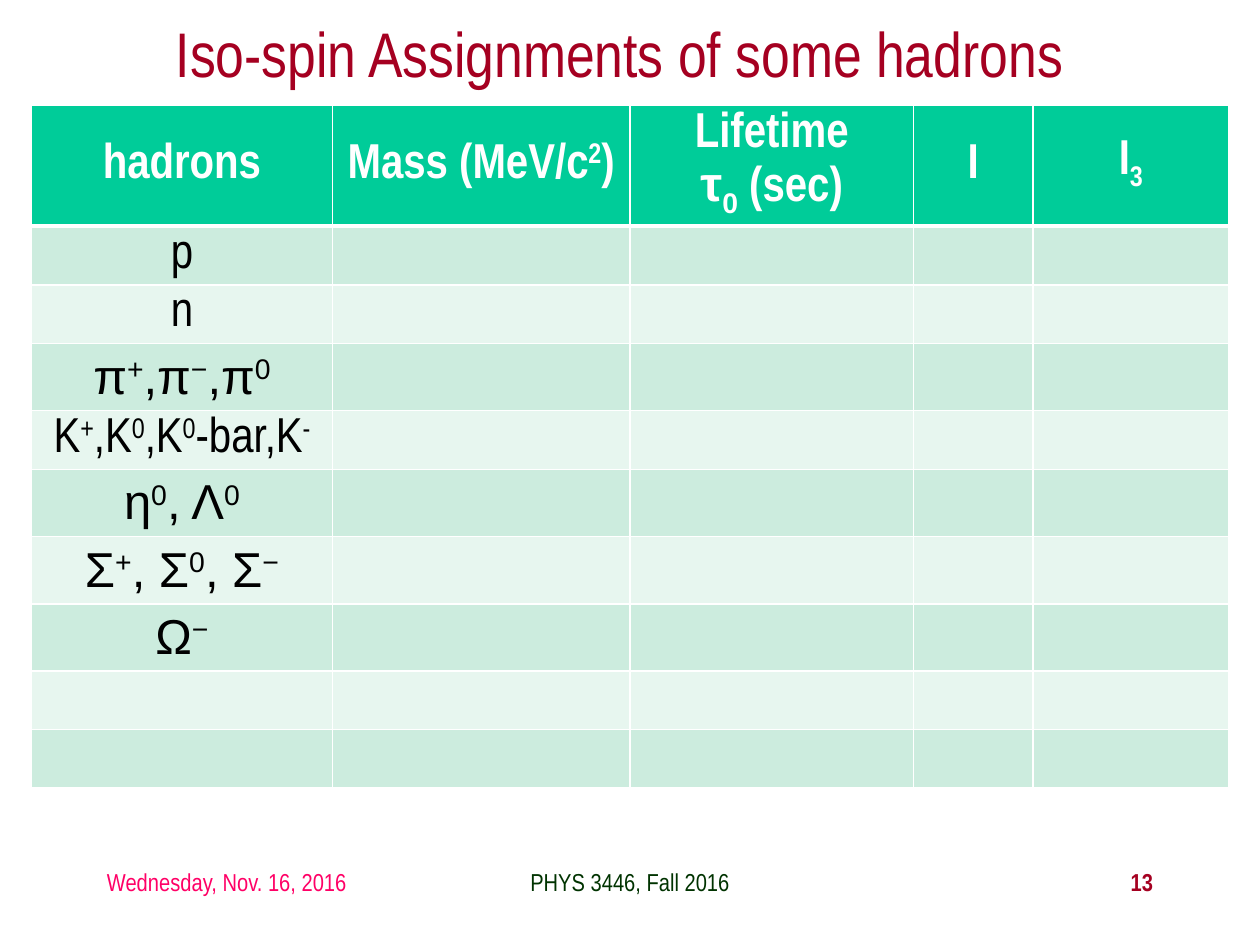
from dataclasses import dataclass

from lxml.etree import SubElement
from pptx import Presentation
from pptx.dml.color import RGBColor
from pptx.enum.text import MSO_ANCHOR as Anchor, MSO_AUTO_SIZE as AutoSize, PP_ALIGN as Align
from pptx.oxml.ns import qn
from pptx.util import Pt


@dataclass(frozen=True)
class Theme:
    narrow: str = "Arial Narrow"
    wide: str = "Arial"
    title: str = "A50021"
    date: str = "FF0066"
    course: str = "003300"
    header: str = "00CC99"
    bands: tuple = ("CCECDE", "E7F6EF")
    white: str = "FFFFFF"
    ink: str = "000000"
    title_size: int = 36
    table_size: int = 28
    footer_size: int = 14


T = Theme()
SUP, SUB = 30000, -25000
COLUMNS = (172, 170, 162, 68.4, 111.6)
HEADER_HEIGHT = 68.4
ROW_HEIGHTS = {T.narrow: 33.4, T.wide: 38.4}
HEADERS = [
    [[("hadrons", T.narrow, 0)]],
    [[("Mass (MeV/c", T.narrow, 0), ("2", T.narrow, SUP), (")", T.narrow, 0)]],
    [[("Lifetime", T.narrow, 0)],
     [("τ", T.wide, 0), ("0", T.wide, SUB), (" (sec)", T.narrow, 0)]],
    [[("I", T.narrow, 0)]],
    [[("I", T.narrow, 0), ("3", T.narrow, SUB)]],
]
# Base text and superscripts alternate within each hadron row.
HADRONS = [
    (T.narrow, ["p"]),
    (T.narrow, ["n"]),
    (T.wide, ["π", "+", ",π", "−", ",π", "0"]),
    (T.narrow, ["K", "+", ",K", "0", ",K", "0", "-bar,K", "-"]),
    (T.wide, ["η", "0", ", Λ", "0"]),
    (T.wide, ["Σ", "+", ", Σ", "0", ", Σ", "−"]),
    (T.wide, ["Ω", "−"]),
    (T.narrow, []),
    (T.narrow, []),
]


def add_run(p, text, size, color, font=T.narrow, bold=False, baseline=0):
    r = p.add_run()
    r.text = text
    r.font.name, r.font.size, r.font.bold = font, Pt(size), bold
    r.font.color.rgb = RGBColor.from_string(color)
    if baseline:
        r._r.get_or_add_rPr().set("baseline", str(baseline))


def add_title(s, x, y, w, h):
    sp = s.shapes.title
    sp.left, sp.top, sp.width, sp.height = Pt(x), Pt(y), Pt(w), Pt(h)
    tf = sp.text_frame
    tf.auto_size, tf.vertical_anchor = AutoSize.NONE, Anchor.MIDDLE
    p = tf.paragraphs[0]
    p.alignment = Align.CENTER
    add_run(p, "Iso-spin Assignments of some hadrons", T.title_size, T.title)


def style_cell(cell, fill, bottom=1):
    cell.fill.solid()
    cell.fill.fore_color.rgb = RGBColor.from_string(fill)
    tcPr = cell._tc.get_or_add_tcPr()
    for i, (side, width) in enumerate(zip("LRTB", (1, 1, 1, bottom))):
        ln = SubElement(tcPr, qn(f"a:ln{side}"), w=str(Pt(width)))
        SubElement(SubElement(ln, qn("a:solidFill")), qn("a:srgbClr"), val=T.white)
        tcPr.insert(i, ln)


def fill_cell(cell, lines, color, bold=False):
    tf = cell.text_frame
    for i, line in enumerate(lines):
        p = tf.add_paragraph() if i else tf.paragraphs[0]
        p.alignment = Align.CENTER
        for text, font, baseline in line:
            add_run(p, text, T.table_size, color, font, bold, baseline)


def add_hadron_table(s, x, y, w):
    heights = [HEADER_HEIGHT] + [ROW_HEIGHTS[font] for font, _ in HADRONS]
    table = s.shapes.add_table(len(heights), len(COLUMNS), Pt(x), Pt(y),
                               Pt(w), Pt(sum(heights))).table
    for col, width in zip(table.columns, COLUMNS):
        col.width = Pt(width)
    for row, height in zip(table.rows, heights):
        row.height = Pt(height)
    for c, lines in enumerate(HEADERS):
        cell = table.cell(0, c)
        cell.vertical_anchor = Anchor.MIDDLE
        style_cell(cell, T.header, bottom=3)
        fill_cell(cell, lines, T.white, bold=True)
    for i, (font, parts) in enumerate(HADRONS):
        for c in range(len(COLUMNS)):
            style_cell(table.cell(i + 1, c), T.bands[i % 2], bottom=1)
            if i == 0:
                table.cell(1, c)._tc.tcPr.find(qn("a:lnT")).set("w", str(Pt(3)))
        line = [(text, font, SUP if k % 2 else 0) for k, text in enumerate(parts)]
        fill_cell(table.cell(i + 1, 0), [line], T.ink)


def add_footer(s, x, y, h):
    items = [
        (0, 168, "Wednesday, Nov. 16, 2016", T.date, Align.LEFT, False),
        (192, 228, "PHYS 3446, Fall 2016", T.course, Align.CENTER, False),
        (462, 150, "13", T.title, Align.RIGHT, True),
    ]
    for dx, w, text, color, align, bold in items:
        tf = s.shapes.add_textbox(Pt(x + dx), Pt(y), Pt(w), Pt(h)).text_frame
        tf.word_wrap = True
        p = tf.paragraphs[0]
        p.alignment = align
        add_run(p, text, T.footer_size, color, bold=bold)


def main():
    prs = Presentation()
    prs.slide_width, prs.slide_height = Pt(720), Pt(540)
    s = prs.slides.add_slide(prs.slide_layouts[5])
    add_title(s, 48, 12, 612, 36)
    add_hadron_table(s, 18, 60, sum(COLUMNS))
    add_footer(s, 54, 492, 36)
    prs.save("out.pptx")


if __name__ == "__main__":
    main()
